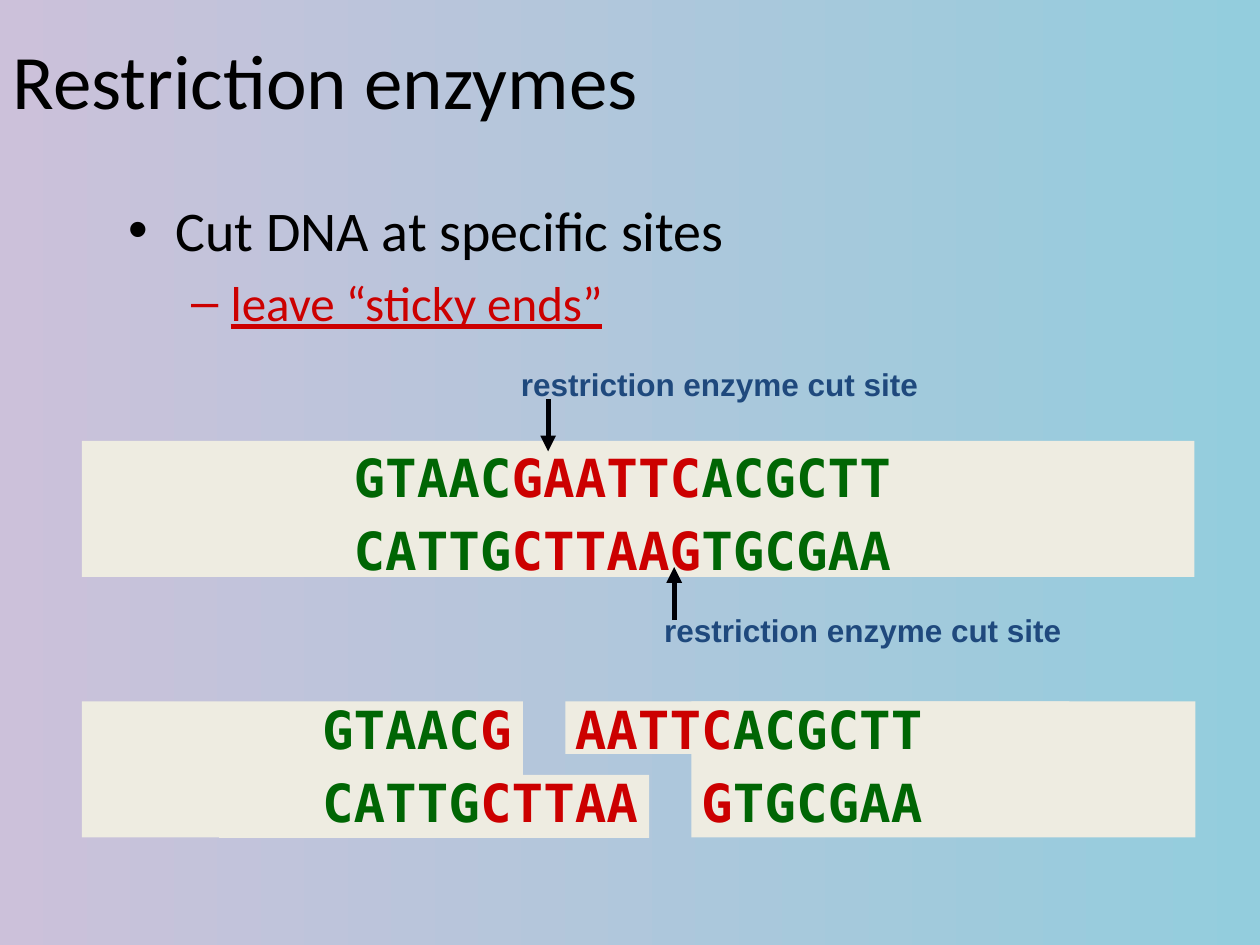
import pptx
import pptx.util
import pptx.dml.color
import pptx.enum.shapes
import pptx.enum.text
import pptx.oxml
import pptx.oxml.ns

Cm, Pt = pptx.util.Cm, pptx.util.Pt
ALIGN = pptx.enum.text.PP_ALIGN
MIDDLE = pptx.enum.text.MSO_ANCHOR.MIDDLE
AUTO = pptx.enum.text.MSO_AUTO_SIZE

COLORS = {
    "left": "CCC1DA", "right": "93CDDD", "text": "000000", "key": "CC0000",
    "strand": "006604", "band": "EEECE1", "label": "1F497D", "arrow": "000005",
}


def rgb(name):
    return pptx.dml.color.RGBColor.from_string(COLORS[name])


def node(tag, **attrs):
    item = pptx.oxml.parse_xml(f"<a:{tag} {pptx.oxml.ns.nsdecls('a')}/>")
    for key, value in attrs.items():
        item.set(key, value)
    return item


class Deck:
    body, mono, sans = "Calibri", "DejaVu Sans Mono", "Arial"

    def __init__(self):
        self.file = pptx.Presentation()
        self.file.slide_width, self.file.slide_height = Cm(25.4), Cm(19.05)
        self.slide = self.file.slides.add_slide(self.file.slide_layouts[1])
        self.host = self.slide.shapes

    def group(self):
        self.host = self.slide.shapes.add_group_shape().shapes

    def ungroup(self):
        self.host = self.slide.shapes

    def back(self):
        fill = self.slide.background.fill
        fill.gradient()
        fill.gradient_angle = 0
        for stop, name, pos in zip(fill.gradient_stops, ("left", "right"), (0, 1)):
            stop.color.rgb = rgb(name)
            stop.position = pos

    def style(self, run, face, size, color, bold=False):
        run.font.name, run.font.size, run.font.bold = face, Pt(size), bold
        run.font.color.rgb = rgb(color)

    def holder(self, shape, x, y, w, h, lines):
        """Fill a placeholder; each line is (text, level, size, color)."""
        shape.left, shape.top, shape.width, shape.height = map(Cm, (x, y, w, h))
        frame = shape.text_frame
        frame.text = "\n".join(line[0] for line in lines)
        frame.auto_size = AUTO.NONE
        for para, (_, level, size, color) in zip(frame.paragraphs, lines):
            para.level = level
            para.alignment = ALIGN.LEFT
            self.style(para.runs[0], self.body, size, color)
        return frame

    def band(self, x, y, w, h):
        box = self.host.add_shape(pptx.enum.shapes.MSO_SHAPE.RECTANGLE,
                                  Cm(x), Cm(y), Cm(w), Cm(h))
        box.shadow.inherit = False
        box.fill.solid()
        box.fill.fore_color.rgb = rgb("band")
        box.line.fill.background()

    def frame(self, x, y, w, h, wrap):
        frame = self.host.add_textbox(Cm(x), Cm(y), Cm(w), Cm(h)).text_frame
        frame.word_wrap = wrap
        frame.auto_size = AUTO.SHAPE_TO_FIT_TEXT
        frame.vertical_anchor = MIDDLE
        return frame

    def strands(self, x, y, w, h, rows):
        """Two strands; each row is (start, site, end), a space marks the cut."""
        frame = self.frame(x, y, w, h, True)
        for i, (start, site, end) in enumerate(rows):
            para = frame.add_paragraph() if i else frame.paragraphs[0]
            para.alignment = ALIGN.CENTER
            if i == 0:
                para.space_after = Pt(6)
            head, cut, rest = site.partition(" ")
            for text, color in ((start, "strand"), (head, "key"), (cut, "key"),
                                (rest, "key"), (end, "strand")):
                if text:
                    run = para.add_run()
                    run.text = text
                    self.style(run, self.mono, 30, color, True)
                    if text == " ":  # widen the cut to two letters
                        run.font._element.set("spc", "1800")

    def label(self, x, y, text):
        frame = self.frame(x, y, 8.53, 0.94, False)
        frame.text = text
        para = frame.paragraphs[0]
        para.alignment = ALIGN.CENTER
        para.line_spacing = 0.9
        self.style(para.runs[0], self.sans, 18, "label", True)

    def arrow(self, x, start, end):
        line = self.host.add_connector(pptx.enum.shapes.MSO_CONNECTOR.STRAIGHT,
                                       Cm(x), Cm(start), Cm(x), Cm(end))
        line.line.width = Pt(3)
        line.line.color.rgb = rgb("arrow")
        line.line._get_or_add_ln().append(node("tailEnd", type="triangle"))
        line._element.spPr.append(node("effectLst"))


def main():
    deck = Deck()
    deck.back()

    # Title and list
    title, points = deck.slide.placeholders
    deck.holder(title, 0, 0, 22.86, 3.18,
                [("Restriction enzymes", 0, 44, "text")]).vertical_anchor = MIDDLE
    frame = deck.holder(points, 2.33, 3.81, 21.59, 3.94,
                        [("Cut DNA at specific sites", 0, 32, "text"),
                         ("leave “sticky ends”", 1, 28, "key")])
    frame.paragraphs[1].runs[0].font.underline = True

    # Cut DNA with sticky ends
    deck.group()
    for area in ((11.4, 14.14, 10.16, 1.06), (4.42, 15.62, 8.67, 1.27),
                 (13.94, 14.14, 10.16, 2.74), (1.65, 14.14, 8.89, 2.74)):
        deck.band(*area)
    deck.strands(4.19, 13.92, 16.71, 3,
                 [("GTAAC", "G AATTC", "ACGCTT"),
                  ("CATTG", "CTTAA G", "TGCGAA")])

    # Whole DNA with its cut sites
    deck.group()
    deck.band(1.65, 8.89, 22.43, 2.74)
    deck.strands(6.6, 8.84, 11.89, 3,
                 [("GTAAC", "GAATTC", "ACGCTT"),
                  ("CATTG", "CTTAAG", "TGCGAA")])
    deck.arrow(11.05, 8.05, 9.1)
    deck.arrow(13.59, 12.5, 11.43)

    # Labels
    deck.ungroup()
    for x, y in ((10.24, 7.32), (13.13, 12.27)):
        deck.label(x, y, "restriction enzyme cut site")

    deck.file.save("out.pptx")


if __name__ == "__main__":
    main()
